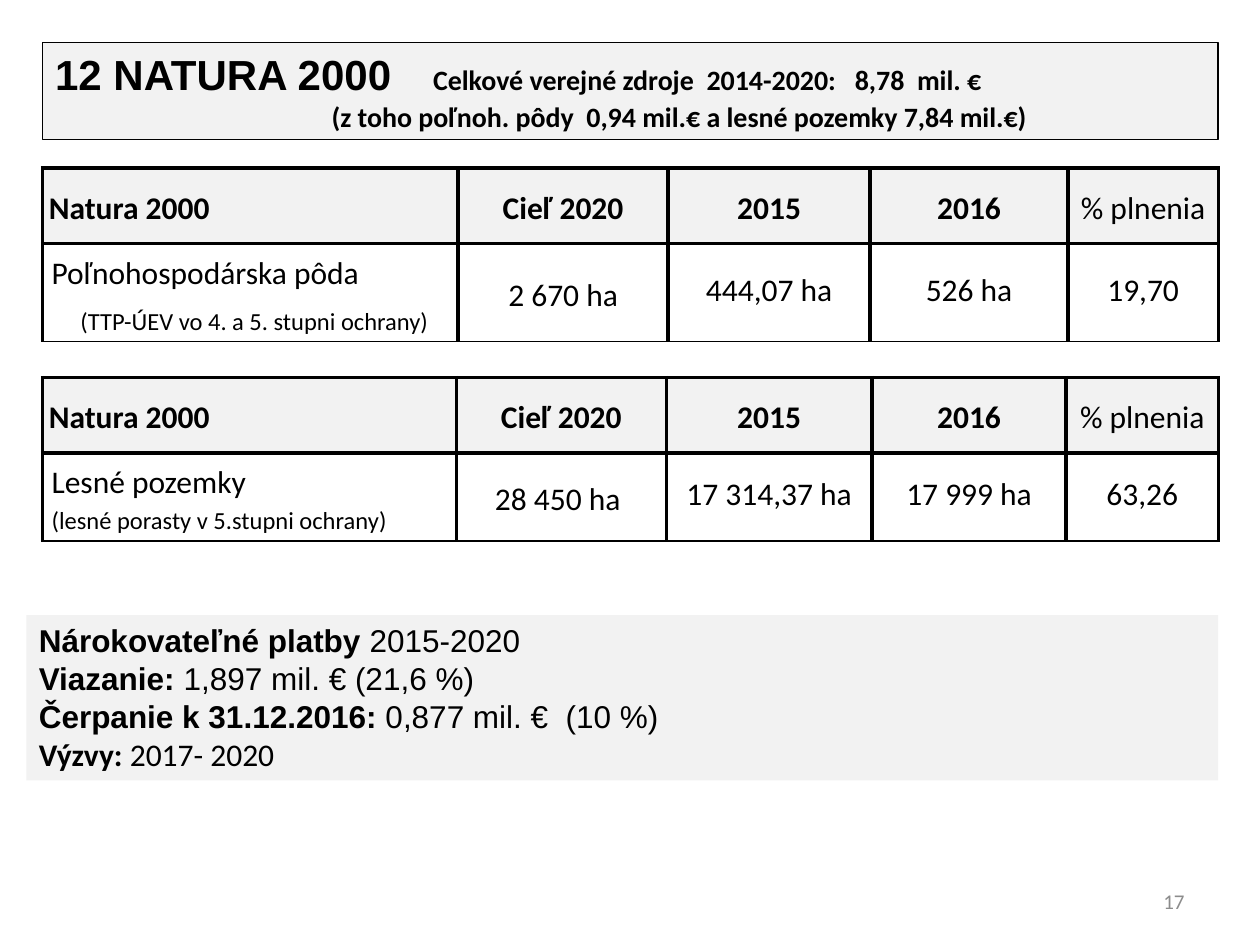
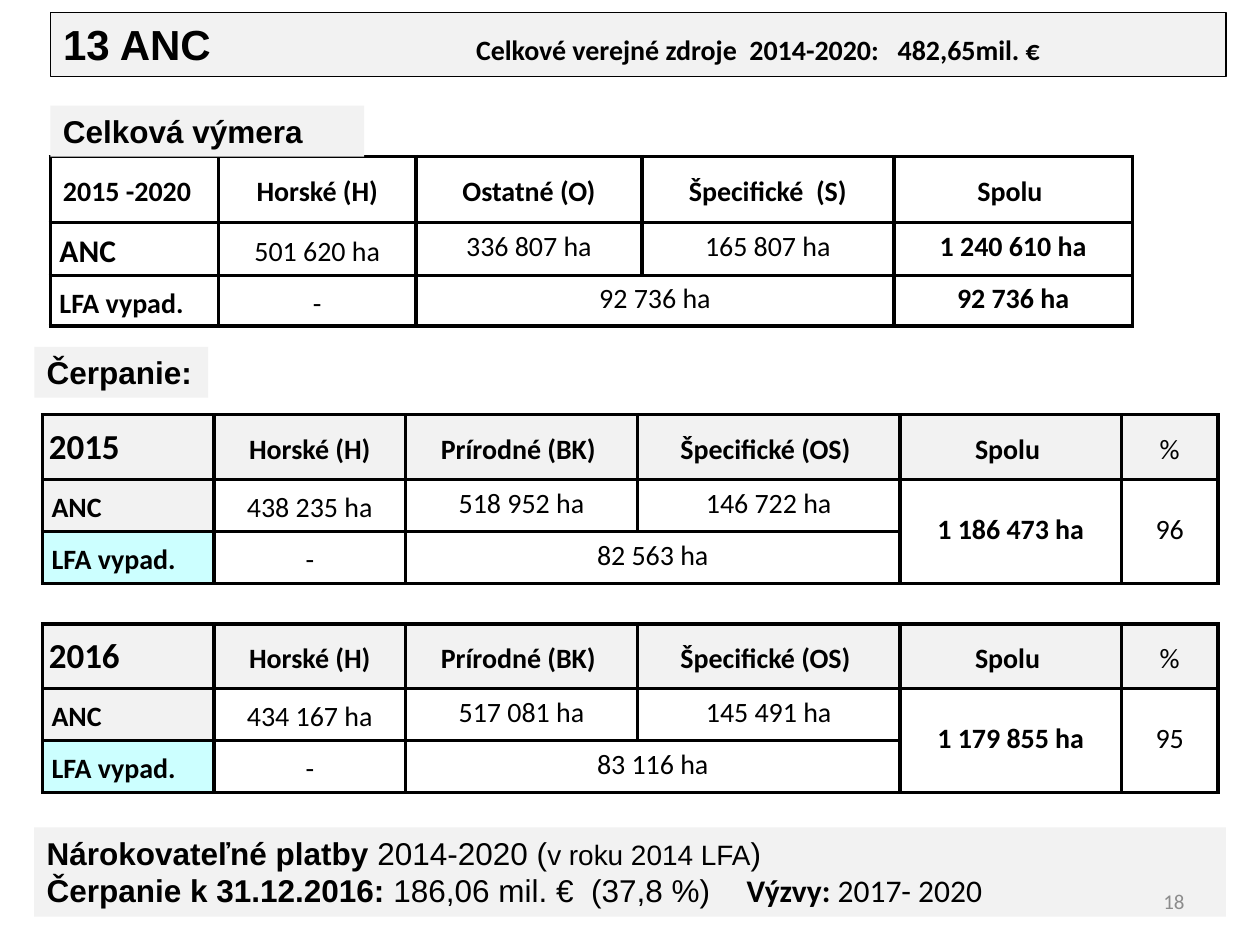
from dataclasses import dataclass

from lxml.etree import SubElement
from pptx import Presentation
from pptx.dml.color import RGBColor
from pptx.enum.shapes import MSO_SHAPE
from pptx.enum.text import MSO_ANCHOR, MSO_AUTO_SIZE, PP_ALIGN
from pptx.oxml.ns import qn
from pptx.util import Pt


@dataclass(frozen=True)
class Theme:
    ink: str = "000000"
    panel: str = "F2F2F2"
    paper: str = "FFFFFF"
    aqua: str = "CCFFFF"
    muted: str = "8C8C8C"
    display: str = "Arial"
    text: str = "Calibri"
    title: int = 24
    year: int = 20
    large: int = 18
    medium: int = 16
    note: int = 14
    small: int = 12
    border: float = 2.25
    thin: float = 1


T = Theme()

# Run styles: font, size, bold
TITLE = (T.display, T.title, True)
SUBTITLE = (T.text, T.medium, True)
LABEL = (T.display, T.large, True)
VALUE = (T.display, T.large, False)
ASIDE = (T.display, T.medium, False)
CALL_LABEL = (T.text, T.large, True)
CALL_VALUE = (T.text, T.large, False)

# Content: boxes are (left, top, width, height) in points
CALLS = [("Výzvy: ", CALL_LABEL), ("2017- 2020", CALL_VALUE)]
NATURA_HEAD = ["Natura 2000", "Cieľ 2020", "2015", "2016", "% plnenia"]
DRAWN_HEAD = ["Horské (H)", "Prírodné (BK) ", "Špecifické (OS) ", "Spolu ", "%"]


def natura_table(top, cols, body_height, note_gap, note_indent, body):
    return dict(left=24.3, top=top, cols=cols, heights=[43.3, body_height],
                rows=[NATURA_HEAD, body], size=T.large, head_fill=T.panel,
                bottom=T.thin, note_gap=note_gap, note_indent=note_indent)


def drawn_table(top, year, areas, lfa_area, total, percent):
    return dict(left=24.3, top=top, cols=[98, 109.5, 132.5, 150, 126.7, 55],
                heights=[37.1, 29.7, 29.7], size=T.medium, head_fill=T.panel,
                rows=[[year] + DRAWN_HEAD,
                      ["ANC", *areas, total, percent],
                      ["LFA vypad.", "-", lfa_area, None, None, None]],
                bold_cols={0, 4}, sizes={(0, 0): T.year},
                fills={(1, 0): T.panel, (2, 0): T.aqua},
                merges=[((1, 4), (2, 4)), ((1, 5), (2, 5)), ((2, 2), (2, 3))])


SLIDES = [
    dict(
        number="17",
        title=dict(box=(24.3, 24.3, 671.8, 55.4), tab=232, indents=[0, 158], lines=[
            [("12 NATURA 2000\t", TITLE),
             ("Celkové verejné zdroje  2014-2020:   8,78  mil. €", SUBTITLE)],
            [("(z toho poľnoh. pôdy  0,94 mil.€ a lesné pozemky 7,84 mil.€)", SUBTITLE)]]),
        tables=[
            natura_table(96, [237.5, 120, 115.5, 113, 86], 56, 5.6, 16.5,
                         [("Poľnohospodárska pôda", "(TTP-ÚEV vo 4. a 5. stupni ochrany)"),
                          "2 670 ha", "444,07 ha", "526 ha", "19,70"]),
            natura_table(215.7, [236.5, 120, 117.5, 111, 87], 49.6, 0, 0,
                         [("Lesné pozemky", "(lesné porasty v 5.stupni ochrany)"),
                          "28 450 ha ", "17 314,37 ha", "17 999 ha", "63,26"])],
        panels=[dict(box=(15.1, 351.5, 681, 94.5), lines=[
            [("Nárokovateľné platby ", LABEL), ("2015-2020", VALUE)],
            [("Viazanie: ", LABEL), ("1,897 mil. € (21,6 %)", VALUE)],
            [("Čerpanie k 31.12.2016: ", LABEL), ("0,877 mil. €  (10 %)", VALUE)],
            CALLS])]),
    dict(
        number="18",
        title=dict(box=(28.8, 7.2, 671.8, 36.4), tab=236, lines=[
            [("13 ANC\t", TITLE),
             ("Celkové verejné zdroje  2014-2020:   482,65mil. €", SUBTITLE)]]),
        tables=[
            dict(left=28.8, top=89.5, cols=[96, 113, 129, 144, 136.3],
                 heights=[37.6, 30.2, 28.8], size=T.medium, head_fill=T.paper,
                 rows=[[" 2015 -2020", "Horské (H)", "Ostatné (O)", "Špecifické  (S)", "Spolu "],
                       ["ANC", "501 620 ha", "336 807 ha", "165 807 ha", "1 240 610 ha"],
                       ["LFA vypad.", "-", "92 736 ha", None, "92 736 ha"]],
                 bold_cols={0, 4}, sizes={(1, 0): T.large}, merges=[((2, 2), (2, 3))]),
            drawn_table(237, "2015", ["438 235 ha", "518 952 ha", "146 722 ha"],
                        "82 563 ha", "1 186 473 ha", "96"),
            drawn_table(356.5, "2016", ["434 167 ha", "517 081 ha", "145 491 ha"],
                        "83 116 ha", "1 179 855 ha", "95")],
        panels=[
            dict(box=(28.8, 60.4, 179.3, 29.1), lines=[[("Celková výmera", LABEL)]]),
            dict(box=(19.6, 198.2, 99.4, 29.1), lines=[[("Čerpanie:", LABEL)]]),
            dict(box=(19.6, 472.8, 681, 51), tab=400, lines=[
                [("Nárokovateľné platby ", LABEL), ("2014-2020 (", VALUE),
                 ("v roku 2014 LFA", ASIDE), (")", VALUE)],
                [("Čerpanie k 31.12.2016: ", LABEL),
                 ("186,06 mil. €  (37,8 %)\t", VALUE), *CALLS]])]),
]
NUMBER_BOX = (516.2, 500.4, 167.8, 28.8)


# Text helpers
def rgb(value):
    return RGBColor.from_string(value)


def add_run(p, text, style, color=T.ink):
    r = p.add_run()
    r.text = text
    r.font.name, size, r.font.bold = style
    r.font.size = Pt(size)
    r.font.color.rgb = rgb(color)


def set_insets(obj, x, y):
    obj.margin_left = obj.margin_right = Pt(x)
    obj.margin_top = obj.margin_bottom = Pt(y)


def set_indent(p, points):
    pPr = p._p.get_or_add_pPr()
    pPr.set("marL", str(Pt(points)))
    pPr.set("indent", "0")


def set_tab(p, points):
    tabs = SubElement(p._p.get_or_add_pPr(), qn("a:tabLst"))
    SubElement(tabs, qn("a:tab"), pos=str(Pt(points)), algn="l")


def paragraphs(tf, count):
    return [tf.paragraphs[0]] + [tf.add_paragraph() for _ in range(count - 1)]


def fill_box(sp, box, lines, tab=None, indents=()):
    sp.left, sp.top, sp.width, sp.height = map(Pt, box)
    sp.fill.solid()
    sp.fill.fore_color.rgb = rgb(T.panel)
    tf = sp.text_frame
    tf.word_wrap = True
    tf.auto_size = MSO_AUTO_SIZE.NONE
    tf.vertical_anchor = MSO_ANCHOR.TOP
    set_insets(tf, 7.2, 3.6)
    for i, (p, runs) in enumerate(zip(paragraphs(tf, len(lines)), lines)):
        p.alignment = PP_ALIGN.LEFT
        if i < len(indents):
            set_indent(p, indents[i])
        if tab:
            set_tab(p, tab)
        for text, style in runs:
            add_run(p, text, style)


# Slide parts
def add_title(s, title):
    sp = s.shapes.title
    fill_box(sp, **title)
    sp.line.color.rgb = rgb(T.ink)
    sp.line.width = Pt(0.75)


def add_panel(s, panel):
    sp = s.shapes.add_shape(MSO_SHAPE.RECTANGLE, *map(Pt, panel["box"]))
    sp.shadow.inherit = False
    sp.line.fill.background()
    fill_box(sp, **panel)


def add_number(s, number):
    tf = s.shapes.add_textbox(*map(Pt, NUMBER_BOX)).text_frame
    tf.word_wrap = True
    tf.vertical_anchor = MSO_ANCHOR.MIDDLE
    p = tf.paragraphs[0]
    p.alignment = PP_ALIGN.RIGHT
    add_run(p, number, (T.text, T.small, False), T.muted)


def set_borders(cell, bottom):
    tcPr = cell._tc.get_or_add_tcPr()
    for side in "LRTB":
        width = bottom if side == "B" else T.border
        ln = SubElement(tcPr, qn("a:ln" + side), w=str(Pt(width)))
        SubElement(SubElement(ln, qn("a:solidFill")), qn("a:srgbClr"), val=T.ink)


def add_table(s, left, top, cols, heights, rows, size, head_fill, bottom=T.border,
              note_gap=0, note_indent=0, bold_cols=(), sizes={}, fills={}, merges=()):
    table = s.shapes.add_table(len(rows), len(cols), Pt(left), Pt(top),
                               Pt(sum(cols)), Pt(sum(heights))).table
    table.first_row = table.horz_banding = False
    for col, width in zip(table.columns, cols):
        col.width = Pt(width)
    for row, height in zip(table.rows, heights):
        row.height = Pt(height)

    for i, row in enumerate(rows):
        head = i == 0
        for j, content in enumerate(row):
            cell = table.cell(i, j)
            set_borders(cell, T.border if head else bottom)
            cell.fill.solid()
            cell.fill.fore_color.rgb = rgb(fills.get((i, j), head_fill if head else T.paper))
            if content is None:
                continue
            cell.vertical_anchor = MSO_ANCHOR.MIDDLE
            texts = content if isinstance(content, tuple) else (content,)
            percent = head and texts[0].startswith("%")
            set_insets(cell, *((0, 0) if percent else (3.6, 2.2) if head else (5.2, 2.6)))
            bold = not percent if head else j in bold_cols
            cell_size = sizes.get((i, j), size)
            for n, p in enumerate(paragraphs(cell.text_frame, len(texts))):
                p.alignment = PP_ALIGN.CENTER if j else PP_ALIGN.LEFT
                p.line_spacing = (1.0 if cell_size == T.year
                                  else 1.15 if head or j < 2 else 0.75)
                p.space_before = Pt(note_gap if n else 4.5)
                if n:
                    set_indent(p, note_indent)
                add_run(p, texts[n], (T.text, T.note if n else cell_size, bold))

    for first, last in merges:
        table.cell(*first).merge(table.cell(*last))


def main():
    prs = Presentation()
    prs.slide_width, prs.slide_height = Pt(720), Pt(540)
    for content in SLIDES:
        s = prs.slides.add_slide(prs.slide_layouts[5])
        add_title(s, content["title"])
        for table in content["tables"]:
            add_table(s, **table)
        for panel in content["panels"]:
            add_panel(s, panel)
        add_number(s, content["number"])
    prs.save("out.pptx")


if __name__ == "__main__":
    main()
